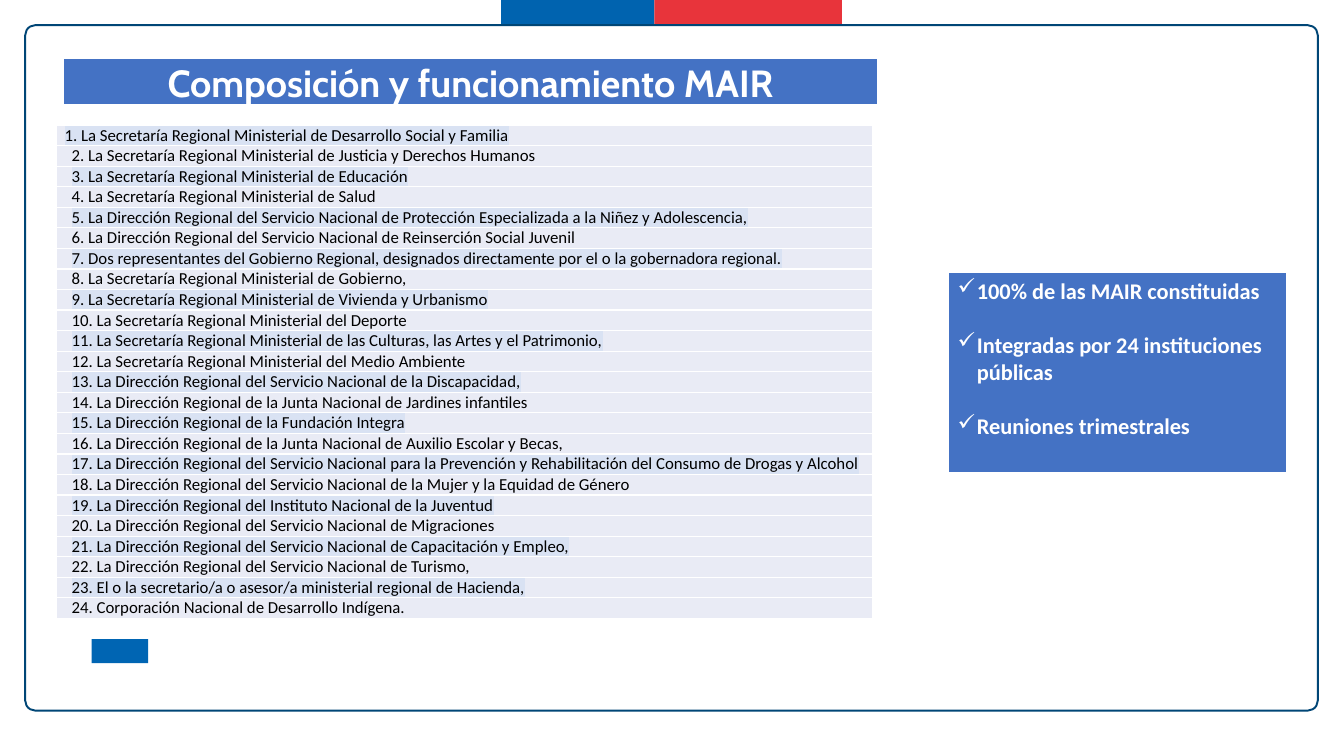
from lxml import etree
from pptx import Presentation
from pptx.dml.color import RGBColor
from pptx.enum.shapes import MSO_SHAPE
from pptx.enum.text import MSO_ANCHOR, PP_ALIGN
from pptx.oxml.ns import qn
from pptx.util import Inches, Pt

RECT, ROUNDED = MSO_SHAPE.RECTANGLE, MSO_SHAPE.ROUNDED_RECTANGLE
TOP, MIDDLE = MSO_ANCHOR.TOP, MSO_ANCHOR.MIDDLE
LEFT, CENTER, JUSTIFY = PP_ALIGN.LEFT, PP_ALIGN.CENTER, PP_ALIGN.JUSTIFY

COLORS = {
    "flag_blue": "0063AF", "flag_red": "E8343B", "frame": "004676",
    "emblem": "0065B3", "panel": "4472C4", "white": "FFFFFF",
    "black": "000000", "row": "E9EBF5", "highlight": "D9E2F3",
}
INSTITUTIONS = [
    "La Secretaría Regional Ministerial de Desarrollo Social y Familia",
    "La Secretaría Regional Ministerial de Justicia y Derechos Humanos",
    "La Secretaría Regional Ministerial de Educación",
    "La Secretaría Regional Ministerial de Salud",
    "La Dirección Regional del Servicio Nacional de Protección Especializada a la Niñez y Adolescencia,",
    "La Dirección Regional del Servicio Nacional de Reinserción Social Juvenil",
    "Dos representantes del Gobierno Regional, designados directamente por el o la gobernadora regional.",
    "La Secretaría Regional Ministerial de Gobierno,",
    "La Secretaría Regional Ministerial de Vivienda y Urbanismo",
    "La Secretaría Regional Ministerial del Deporte",
    "La Secretaría Regional Ministerial de las Culturas, las Artes y el Patrimonio,",
    "La Secretaría Regional Ministerial del Medio Ambiente",
    "La Dirección Regional del Servicio Nacional de la Discapacidad,",
    "La Dirección Regional de la Junta Nacional de Jardines infantiles",
    "La Dirección Regional de la Fundación Integra",
    "La Dirección Regional de la Junta Nacional de Auxilio Escolar y Becas,",
    "La Dirección Regional del Servicio Nacional para la Prevención y Rehabilitación del Consumo de Drogas y Alcohol",
    "La Dirección Regional del Servicio Nacional de la Mujer y la Equidad de Género",
    "La Dirección Regional del Instituto Nacional de la Juventud",
    "La Dirección Regional del Servicio Nacional de Migraciones",
    "La Dirección Regional del Servicio Nacional de Capacitación y Empleo,",
    "La Dirección Regional del Servicio Nacional de Turismo,",
    "El o la secretario/a o asesor/a ministerial regional de Hacienda,",
    "Corporación Nacional de Desarrollo Indígena.",
]
FACTS = ["100% de las MAIR constituidas",
         "Integradas por 24 instituciones públicas",
         "Reuniones trimestrales"]


def rgb(name):
    """Return the named colour."""
    return RGBColor.from_string(COLORS[name])


def add_box(s, box, fill=None, line=None, width=1.5, shape=RECT):
    """Add a preset shape in box (left, top, width, height in inches)."""
    sp = s.shapes.add_shape(shape, *map(Inches, box))
    sp.shadow.inherit = False
    if fill:
        sp.fill.solid()
        sp.fill.fore_color.rgb = rgb(fill)
    else:
        sp.fill.background()
    if line:
        sp.line.color.rgb = rgb(line)
        sp.line.width = Pt(width)
    else:
        sp.line.fill.background()
    return sp


def add_run(p, text, size, font, color, bold=False):
    """Add a formatted run to a paragraph."""
    r = p.add_run()
    r.text = text
    r.font.size = Pt(size)
    r.font.bold = bold
    r.font.color.rgb = rgb(color)
    r.font.name = font
    return r


def add_frame(s, box):
    """Draw the rounded frame, the flag above it and the emblem block."""
    left, top, _, height = box
    add_box(s, (left + 4.72, 0, 1.52, top), "flag_blue")
    add_box(s, (left + 6.24, 0, 1.86, top), "flag_red")
    frame = add_box(s, box, line="frame", width=1.4, shape=ROUNDED)
    frame.adjustments[0] = 0.1 / height
    add_box(s, (left + 0.66, top + 6.09, 0.56, 0.24), "emblem")


def add_title(s, box, text):
    """Draw the title bar."""
    tf = add_box(s, box, "panel", "white").text_frame
    tf.word_wrap = True
    tf.vertical_anchor = TOP
    tf.margin_left = tf.margin_right = tf.margin_bottom = 0
    tf.margin_top = Inches(0.01)
    p = tf.paragraphs[0]
    p.alignment = CENTER
    add_run(p, text, 27, "Cabin", "white", True)


def add_facts(s, box, facts):
    """Draw the panel of check-marked facts."""
    tf = add_box(s, box, "panel", "white").text_frame
    tf.word_wrap = True
    tf.vertical_anchor = TOP
    for i, fact in enumerate(facts):
        p = tf.paragraphs[0] if i == 0 else tf.add_paragraph()
        p.alignment = LEFT
        pPr = p._p.get_or_add_pPr()
        pPr.set("marL", str(Inches(0.19)))
        pPr.set("indent", str(-Inches(0.19)))
        etree.SubElement(pPr, qn("a:buChar"), char="✓")
        if i:
            p.space_before = Pt(19.5)
        add_run(p, fact, 16, "Calibri", "white", True)


def set_borders(cell, color, width):
    """Give a cell the same line on all four sides."""
    tcPr = cell._tc.get_or_add_tcPr()
    for i, side in enumerate(("lnL", "lnR", "lnT", "lnB")):
        ln = etree.Element(qn(f"a:{side}"), w=str(Pt(width)))
        fill = etree.SubElement(ln, qn("a:solidFill"))
        etree.SubElement(fill, qn("a:srgbClr"), val=COLORS[color])
        tcPr.insert(i, ln)


def set_highlight(r, color):
    """Put a highlight behind a run."""
    highlight = etree.Element(qn("a:highlight"))
    etree.SubElement(highlight, qn("a:srgbClr"), val=COLORS[color])
    r.font._element.find(qn("a:solidFill")).addnext(highlight)


def add_institutions(s, box, names):
    """Draw the numbered one-column table, highlighting odd entries."""
    table = s.shapes.add_table(len(names), 1, *map(Inches, box)).table
    table.first_row = table.horz_banding = False
    for i, name in enumerate(names):
        table.rows[i].height = Inches(box[3] / len(names))
        cell = table.cell(i, 0)
        cell.margin_top = cell.margin_right = cell.margin_bottom = 0
        cell.margin_left = Inches(0.15 if i else 0.08)
        cell.vertical_anchor = MIDDLE
        cell.fill.solid()
        cell.fill.fore_color.rgb = rgb("row")
        set_borders(cell, "white", 1)
        p = cell.text_frame.paragraphs[0]
        p.alignment = JUSTIFY
        r = add_run(p, f"{i + 1}. {name}", 12, "Calibri", "black")
        if i % 2 == 0:
            set_highlight(r, "highlight")


def main():
    """Build the slide and save it."""
    prs = Presentation()
    prs.slide_width, prs.slide_height = Inches(13.33), Inches(7.5)
    s = prs.slides.add_slide(prs.slide_layouts[6])
    add_frame(s, (0.25, 0.25, 12.82, 6.8))
    add_title(s, (0.62, 0.58, 8.09, 0.46), "Composición y funcionamiento MAIR")
    add_facts(s, (9.4, 2.7, 3.37, 1.99), FACTS)
    add_institutions(s, (0.56, 1.24, 8.09, 4.9), INSTITUTIONS)
    prs.save("out.pptx")


if __name__ == "__main__":
    main()
